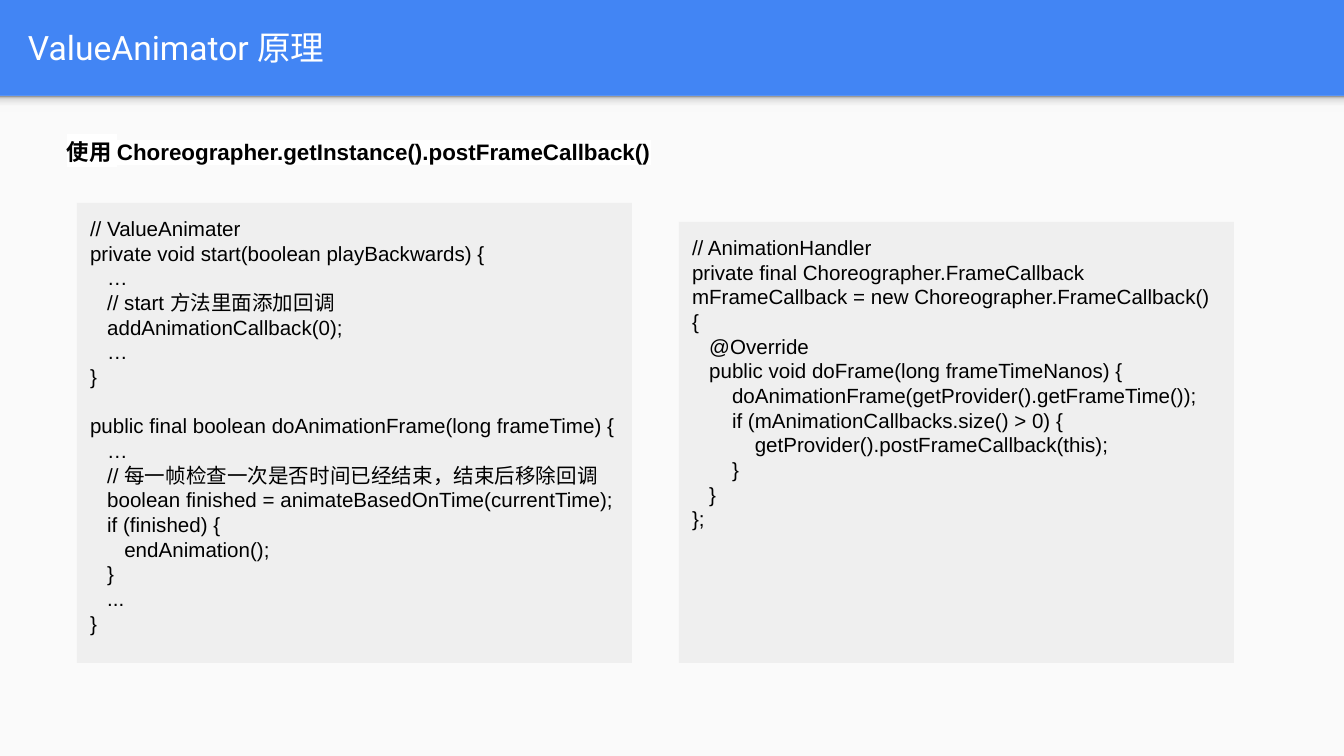
"""Build the slide on how ValueAnimator works."""
from lxml.etree import SubElement
from pptx import Presentation
from pptx.dml.color import RGBColor
from pptx.enum.shapes import MSO_SHAPE
from pptx.enum.text import MSO_ANCHOR, MSO_AUTO_SIZE, PP_ALIGN
from pptx.oxml.ns import qn
from pptx.util import Emu, Pt

SCALE = 914400 / 134.4
WIDTH, HEIGHT, HEADER = 1344, 756, 96
INSET = 13
CODE_SIZE = 11
SPACE_WIDTH = 3.06
LINE_HEIGHT = 13.2
COLORS = {
    "header": "4285F4",
    "sheet": "FAFAFA",
    "panel": "EFEFEF",
    "text": "000000",
    "white": "FFFFFF",
}
SHADOW_STOPS = [(0, "F9F9F9"), (36, "F9F9F9"), (80, "DEDEDE"), (100, "999999")]

ANIMATOR_CODE = """\
// ValueAnimater
private void start(boolean playBackwards) {
   …
   // start 方法里面添加回调
   addAnimationCallback(0);
   …
}

public final boolean doAnimationFrame(long frameTime) {
   …
   // 每一帧检查一次是否时间已经结束，结束后移除回调
   boolean finished = animateBasedOnTime(currentTime);
   if (finished) {
      endAnimation();
   }
   ...
}"""
HANDLER_CODE = """\
// AnimationHandler
private final Choreographer.FrameCallback mFrameCallback = new Choreographer.FrameCallback() {
   @Override
   public void doFrame(long frameTimeNanos) {
       doAnimationFrame(getProvider().getFrameTime());
       if (mAnimationCallbacks.size() > 0) {
           getProvider().postFrameCallback(this);
       }
   }
};"""


def px(length):
    return Emu(round(length * SCALE))


class SlideBuilder:
    def __init__(self, presentation):
        layout = presentation.slide_layouts[5]
        self.slide = presentation.slides.add_slide(layout)
        fill = self.slide.background.fill
        fill.solid()
        fill.fore_color.rgb = RGBColor.from_string(COLORS["header"])

    def frame(self, shape, anchor=MSO_ANCHOR.TOP):
        frame = shape.text_frame
        frame.word_wrap = True
        frame.auto_size = MSO_AUTO_SIZE.NONE
        frame.vertical_anchor = anchor
        frame.margin_left = frame.margin_right = px(INSET)
        frame.margin_top = frame.margin_bottom = px(INSET)
        return frame

    def style(self, paragraph, size, color="text", font="Arial", bold=False):
        paragraph.alignment = PP_ALIGN.LEFT
        for run in paragraph.runs:
            run.font.size = Pt(size)
            run.font.name = font
            run.font.bold = bold
            run.font.color.rgb = RGBColor.from_string(COLORS[color])

    def title(self, text, *box):
        shape = self.slide.shapes.title
        shape.left, shape.top, shape.width, shape.height = map(px, box)
        frame = self.frame(shape, MSO_ANCHOR.MIDDLE)
        frame.text = text
        self.style(frame.paragraphs[0], 18, "white", "Roboto")

    def rectangle(self, color, *box):
        shape = self.slide.shapes.add_shape(MSO_SHAPE.RECTANGLE, *map(px, box))
        shape.shadow.inherit = False
        shape.line.fill.background()
        shape.fill.solid()
        shape.fill.fore_color.rgb = RGBColor.from_string(COLORS[color])
        return shape

    def header_shadow(self, *box):
        shape = self.rectangle("sheet", *box)
        shape.fill.gradient()
        shape.fill.gradient_angle = 90
        stops = shape.element.spPr.find(".//" + qn("a:gsLst"))
        stops.clear()
        for position, color in SHADOW_STOPS:
            stop = SubElement(stops, qn("a:gs"), pos=str(position * 1000))
            SubElement(stop, qn("a:srgbClr"), val=color)

    def heading(self, text, *box):
        frame = self.frame(self.slide.shapes.add_textbox(*map(px, box)))
        frame.text = text
        paragraph = frame.paragraphs[0]
        self.style(paragraph, 12, bold=True)
        properties = paragraph.runs[0].font._element
        highlight = SubElement(properties, qn("a:highlight"))
        SubElement(highlight, qn("a:srgbClr"), val=COLORS["white"])
        properties.find(qn("a:solidFill")).addnext(highlight)

    def code(self, source, *box):
        frame = self.frame(self.rectangle("panel", *box))
        lines = source.splitlines()
        frame.text = "\n".join(line.strip() for line in lines if line)
        paragraphs = iter(frame.paragraphs)
        gap = 0
        for line in lines:
            if not line:
                gap = LINE_HEIGHT
                continue
            paragraph = next(paragraphs)
            self.style(paragraph, CODE_SIZE)
            paragraph.space_before = Pt(gap)
            gap = 0
            indent = len(line) - len(line.lstrip())
            properties = paragraph._p.get_or_add_pPr()
            properties.set("marL", str(Pt(indent * SPACE_WIDTH)))
            properties.set("indent", "0")


def main():
    presentation = Presentation()
    presentation.slide_width = px(WIDTH)
    presentation.slide_height = px(HEIGHT)
    builder = SlideBuilder(presentation)
    builder.rectangle("sheet", 0, HEADER, WIDTH, HEIGHT - HEADER)
    builder.header_shadow(0, HEADER, WIDTH, 16)
    builder.title("ValueAnimator 原理", 15, 3, 1297, 89)
    builder.heading("使用 Choreographer.getInstance().postFrameCallback()", 54, 125, 648, 48)
    bottom = 663
    for source, left, top in ((ANIMATOR_CODE, 77, 203), (HANDLER_CODE, 679, 222)):
        builder.code(source, left, top, 555, bottom - top)
    presentation.save("out.pptx")


if __name__ == "__main__":
    main()
